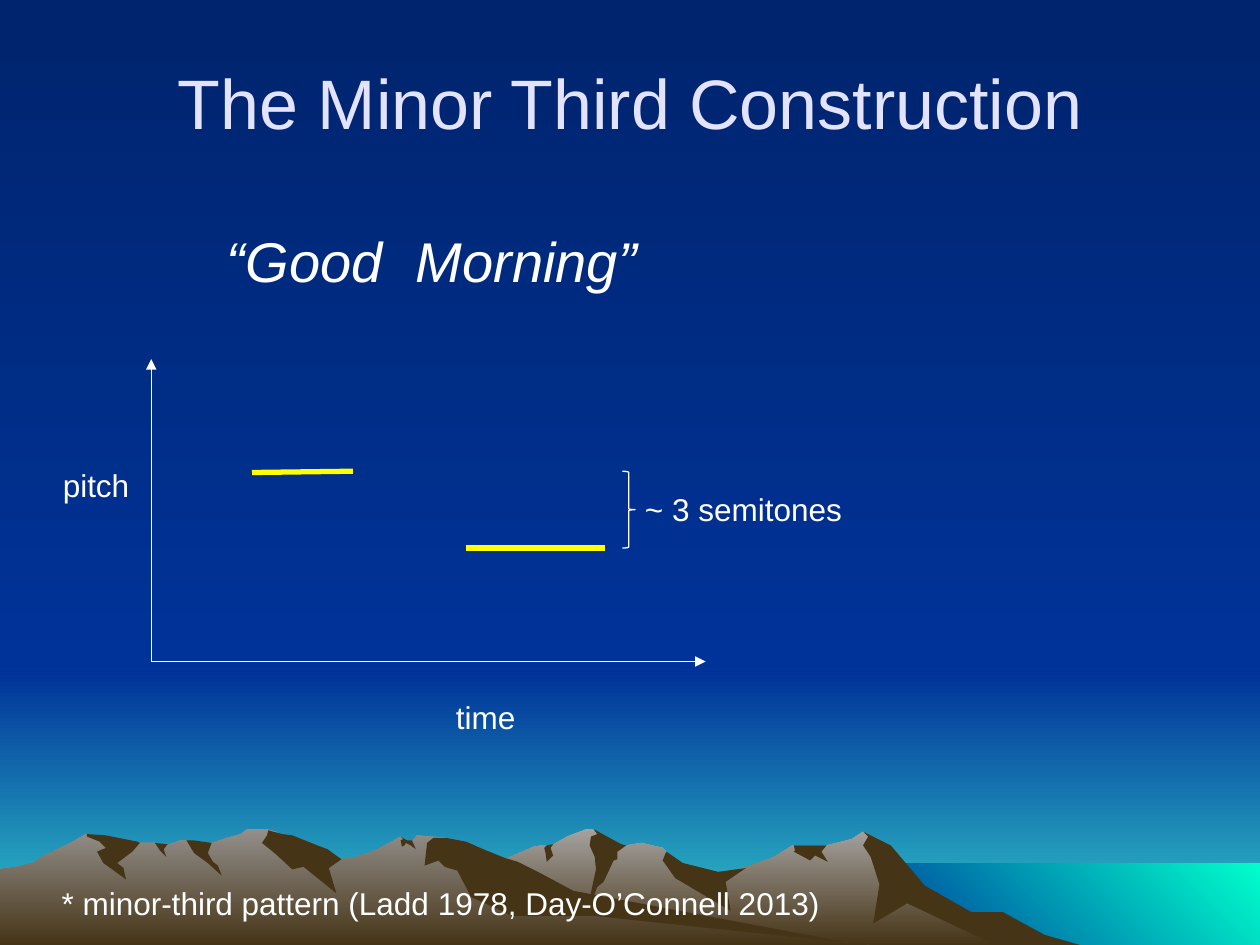
from lxml.etree import SubElement
from pptx import Presentation
from pptx.dml.color import RGBColor
from pptx.enum.shapes import MSO_CONNECTOR, MSO_SHAPE
from pptx.enum.text import MSO_ANCHOR, MSO_AUTO_SIZE, PP_ALIGN
from pptx.oxml.ns import qn
from pptx.util import Inches, Pt

COLUMNS, ROWS = 1000, 750
COLORS = {
    "night": "00246D", "blue": "003399", "horizon": "33CCCC", "sea": "00FFCC",
    "light_rock": "A5A29F", "rock": "938F8B", "shade": "463416",
    "title": "E3E3FF", "text": "FFFFFF", "tone": "FFFF00",
}
DOWN, UP_RIGHT = 270, 45

# Outlines as (column, row) points, from back to front.
RIGHT_RANGE = [
    (802, 740), (778, 727), (764, 723), (723, 698), (702, 671), (685, 660),
    (676, 666), (656, 671), (629, 671), (613, 681), (566, 697), (536, 690),
    (529, 676), (526, 673), (509, 669), (497, 671), (486, 673), (474, 661),
    (471, 658), (465, 658), (450, 664), (438, 671), (430, 671), (424, 672),
    (412, 677), (399, 683), (394, 685), (355, 698), (327, 709), (277, 739),
    (258, 750), (820, 750)]
RIGHT_SHADES = [
    [(796, 724), (771, 724), (734, 703), (707, 671), (685, 660), (689, 664),
     (685, 671), (691, 680), (698, 702), (693, 733), (720, 717), (790, 750),
     (857, 750), (829, 742)],
    [(471, 658), (474, 662), (469, 664), (468, 671), (472, 680), (473, 690),
     (465, 727), (474, 704), (479, 700), (487, 683), (490, 682), (490, 676),
     (497, 671), (493, 670)],
    [(529, 676), (528, 678), (526, 683), (536, 697), (580, 723), (576, 700),
     (592, 689), (570, 692), (542, 685)],
    [(650, 671), (630, 671), (631, 675), (630, 676), (643, 683), (647, 679),
     (657, 684), (652, 676), (656, 671)],
    [(433, 677), (432, 673), (434, 671), (439, 670), (437, 673), (439, 679),
     (434, 684)],
]
LEFT_RANGE = [
    (690, 750), (667, 748), (432, 712), (354, 665), (331, 663), (327, 668),
    (323, 668), (318, 664), (296, 676), (279, 681), (271, 682), (260, 676),
    (236, 681), (223, 663), (219, 660), (212, 658), (196, 658), (191, 662),
    (180, 665), (168, 669), (160, 671), (148, 667), (143, 667), (132, 671),
    (128, 671), (123, 669), (111, 669), (94, 671), (68, 662), (56, 669),
    (46, 674), (35, 679), (26, 685), (14, 688), (0, 690), (0, 750)]
LEFT_SHADES = [
    [(212, 663), (208, 669), (219, 678), (232, 690), (241, 688), (267, 709),
     (261, 689), (271, 682), (260, 674), (252, 671), (232, 663), (224, 662),
     (213, 659)],
    [(370, 668), (354, 665), (344, 665), (339, 669), (337, 687), (348, 683),
     (353, 688), (363, 691), (374, 712), (407, 727), (472, 727), (690, 750),
     (683, 750), (455, 707), (427, 692), (411, 684), (401, 681), (386, 675)],
    [(318, 667), (320, 666), (318, 664), (323, 667), (327, 667), (330, 674),
     (326, 671), (322, 669), (321, 671), (319, 672)],
    [(154, 667), (168, 669), (165, 677), (169, 684), (173, 687), (176, 695),
     (165, 685), (154, 677), (148, 667)],
    [(133, 670), (130, 674), (132, 680), (127, 675), (123, 669)],
    [(109, 668), (111, 669), (105, 676), (93, 685), (98, 689), (100, 698),
     (82, 685), (77, 676), (84, 673), (79, 668), (69, 664), (69, 662),
     (84, 663), (94, 665)],
]


class SlideCanvas:
    """Draws on one slide with lengths in grid columns and rows."""

    font = "Arial"

    def __init__(self, deck):
        self.slide = deck.slides.add_slide(deck.slide_layouts[1])
        self.shapes = self.slide.shapes
        self.column = deck.slide_width // COLUMNS
        self.row = deck.slide_height // ROWS

    def place(self, left, top, width, height):
        return (left * self.column, top * self.row,
                width * self.column, height * self.row)

    def color(self, name):
        return RGBColor.from_string(COLORS[name])

    def paint(self, fill, names, angle=DOWN):
        """Fill with one colour, or with a gradient when two are named."""
        if len(names) == 1:
            fill.solid()
            fill.fore_color.rgb = self.color(names[0])
            return
        fill.gradient()
        fill.gradient_angle = angle
        for stop, name in zip(fill.gradient_stops, names):
            stop.color.rgb = self.color(name)

    def band(self, area, names, angle=DOWN):
        shape = self.shapes.add_shape(MSO_SHAPE.RECTANGLE, *self.place(*area))
        shape.shadow.inherit = False
        shape.line.fill.background()
        self.paint(shape.fill, names, angle)

    def outline(self, points, *names):
        builder = self.shapes.build_freeform(*points[0], scale=(self.column, self.row))
        builder.add_line_segments(points[1:], close=True)
        shape = builder.convert_to_shape()
        shape.shadow.inherit = False
        shape.line.fill.background()
        self.paint(shape.fill, names)

    def line(self, start, end, color="text", width=0.75, arrow=False):
        (left, top), (right, bottom) = start, end
        connector = self.shapes.add_connector(
            MSO_CONNECTOR.STRAIGHT, left * self.column, top * self.row,
            right * self.column, bottom * self.row)
        connector.line.color.rgb = self.color(color)
        connector.line.width = Pt(width)
        properties = connector._element.spPr
        if arrow:
            SubElement(properties.find(qn("a:ln")), qn("a:tailEnd"), type="triangle")
        SubElement(properties, qn("a:effectLst"))

    def brace(self, *area):
        shape = self.shapes.add_shape(MSO_SHAPE.RIGHT_BRACE, *self.place(*area))
        shape.shadow.inherit = False
        shape.fill.background()
        shape.line.color.rgb = self.color("text")
        shape.line.width = Pt(0.75)

    def add_text(self, para, text, size, color="text", italic=False):
        span = para.add_run()
        span.text = text
        span.font.name = self.font
        span.font.size = Pt(size)
        span.font.italic = italic
        span.font.color.rgb = self.color(color)

    def label(self, text, *area):
        frame = self.shapes.add_textbox(*self.place(*area)).text_frame
        frame.word_wrap = False
        frame.auto_size = MSO_AUTO_SIZE.SHAPE_TO_FIT_TEXT
        self.add_text(frame.paragraphs[0], text, 18)

    def placeholder(self, index, *area):
        """Move a placeholder in front of the scenery; return it and its paragraph."""
        box = self.slide.placeholders[index]
        box.left, box.top, box.width, box.height = self.place(*area)
        self.shapes._spTree.append(box._element)
        box.text_frame.auto_size = MSO_AUTO_SIZE.NONE
        return box, box.text_frame.paragraphs[0]

    def title(self, text, *area):
        box, para = self.placeholder(0, *area)
        box.text_frame.vertical_anchor = MSO_ANCHOR.MIDDLE
        para.alignment = PP_ALIGN.CENTER
        self.add_text(para, text, 40, "title")

    def phrase(self, text, tab, *area):
        """Unbulleted italic words, the second one set at a tab stop."""
        para = self.placeholder(1, *area)[1]
        properties = para._p.get_or_add_pPr()
        properties.set("marL", "0")
        properties.set("indent", "0")
        SubElement(properties, qn("a:buNone"))
        stops = SubElement(properties, qn("a:tabLst"))
        SubElement(stops, qn("a:tab"), pos=str(tab * self.column), algn="l")
        self.add_text(para, text, 32, italic=True)


def main():
    deck = Presentation()
    deck.slide_width, deck.slide_height = Inches(10), Inches(7.5)
    canvas = SlideCanvas(deck)

    canvas.paint(canvas.slide.background.fill, ("night", "blue"))
    canvas.band((0, 533, COLUMNS, 217), ("blue", "horizon"))
    canvas.band((0, 0, COLUMNS, 533), ("night", "blue"))
    canvas.band((683, 685, 317, 65), ("blue", "sea"), UP_RIGHT)
    for ridge, light, shades in ((RIGHT_RANGE, "light_rock", RIGHT_SHADES),
                                 (LEFT_RANGE, "rock", LEFT_SHADES)):
        canvas.outline(ridge, light, "shade")
        for shade in shades:
            canvas.outline(shade, "shade")

    canvas.title("The Minor Third Construction", 50, 18, 900, 125)
    canvas.phrase("“Good\tMorning”", 173, 170, 175, 470, 90)

    high, low, origin = 374, 435, (120, 525)
    canvas.line((200, high + 1), (280, high), "tone", 3)
    canvas.line((370, low), (480, low), "tone", 3)
    for axis_end in ((120, 285), (560, 525)):
        canvas.line(origin, axis_end, arrow=True)
    canvas.brace(494, high, 10, low - high)

    canvas.label("pitch", 40, 365, 73, 40)
    canvas.label("time", 352, 549, 68, 40)
    canvas.label("* minor-third pattern (Ladd 1978, Day-O’Connell 2013)", 39, 697, 625, 40)
    canvas.label("~ 3 semitones", 502, 384, 178, 40)

    deck.save("out.pptx")


if __name__ == "__main__":
    main()
